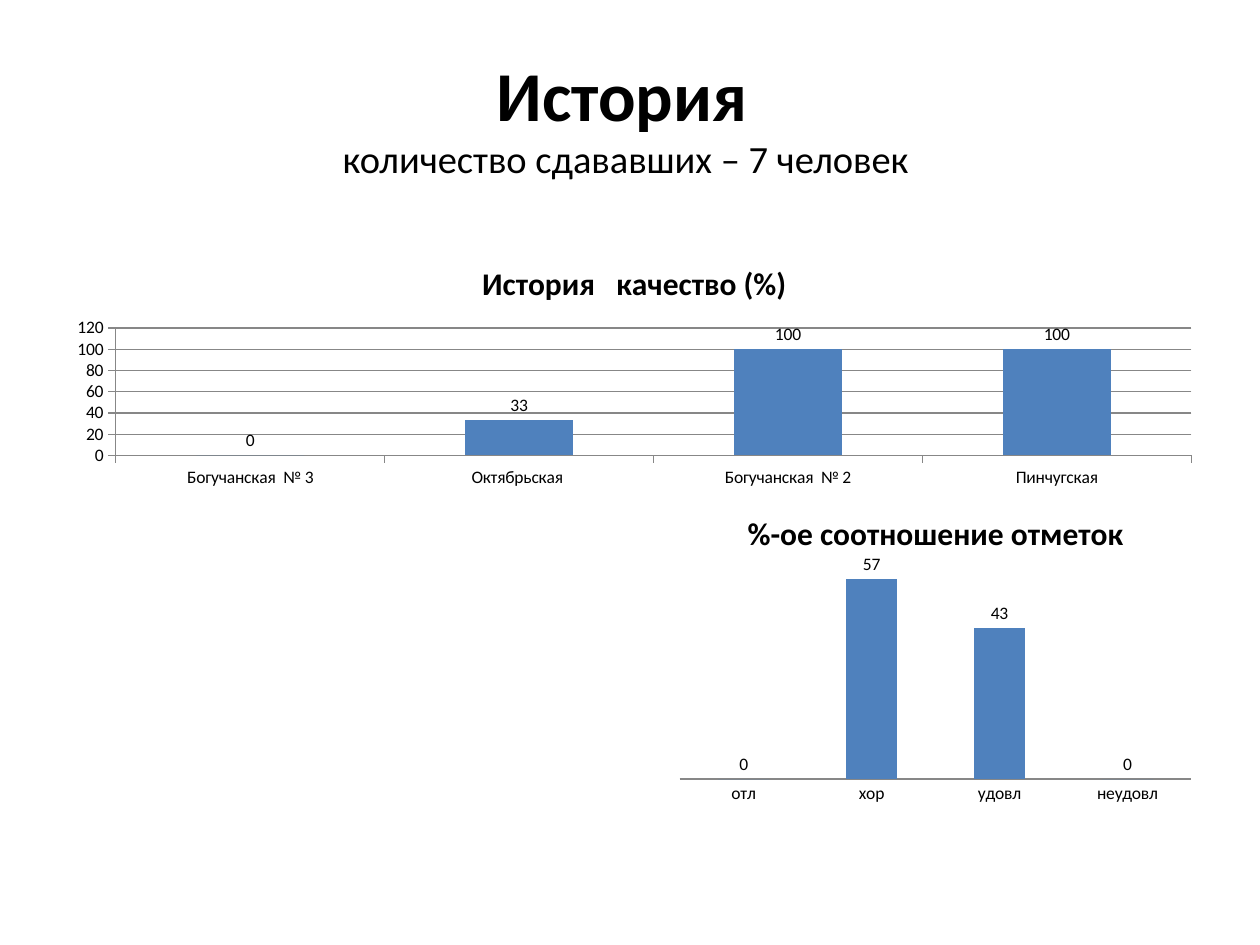
from dataclasses import dataclass
from pptx import Presentation
from pptx import util as u
from pptx.chart import data as chart_data
from pptx.dml import color
from pptx.enum import chart as ce, text

Pt = u.Pt


@dataclass
class Theme:
    font: str = "Calibri"
    ink: color.RGBColor = color.RGBColor(0, 0, 0)
    bar: color.RGBColor = color.RGBColor(0x4F, 0x81, 0xBD)
    rule: color.RGBColor = color.RGBColor(0x87, 0x87, 0x87)
    heading: int = 40
    subheading: int = 22
    chart_title: int = 18
    label: int = 10


theme = Theme()


def style(font, size, bold=False):
    font.name = theme.font
    font.size = Pt(size)
    font.bold = bold
    font.color.rgb = theme.ink


def add_columns(page, title, categories, values, box):
    data = chart_data.CategoryChartData()
    data.categories = categories
    data.add_series("Series 1", values)
    frame = page.shapes.add_chart(
        ce.XL_CHART_TYPE.COLUMN_CLUSTERED, *(Pt(side) for side in box), data)
    chart = frame.chart
    style(chart.font, theme.label)
    chart.has_legend = False
    chart.has_title = True
    span = chart.chart_title.text_frame.paragraphs[0].add_run()
    span.text = title
    style(span.font, theme.chart_title, True)
    chart.chart_title.include_in_layout = False
    plot = chart.plots[0]
    plot.gap_width = 150
    plot.vary_by_categories = False
    plot.has_data_labels = True
    plot.data_labels.show_value = True
    plot.data_labels.position = ce.XL_LABEL_POSITION.OUTSIDE_END
    style(plot.data_labels.font, theme.label)
    fill = plot.series[0].format.fill
    fill.solid()
    fill.fore_color.rgb = theme.bar
    for axis in (chart.category_axis, chart.value_axis):
        axis.major_tick_mark = ce.XL_TICK_MARK.OUTSIDE
        axis.minor_tick_mark = ce.XL_TICK_MARK.NONE
        axis.format.line.color.rgb = theme.rule
        axis.format.line.width = Pt(0.75)
    return chart


deck = Presentation()
deck.slide_width, deck.slide_height = Pt(720), Pt(540)
page = deck.slides.add_slide(deck.slide_layouts[5])

heading = page.shapes.title
heading.left, heading.top = Pt(36), Pt(21.6)
heading.width, heading.height = Pt(648), Pt(90)
heading.text_frame.vertical_anchor = text.MSO_ANCHOR.MIDDLE
para = heading.text_frame.paragraphs[0]
para.alignment = text.PP_ALIGN.CENTER
span = para.add_run()
span.text = "История "
style(span.font, theme.heading, True)
para.add_line_break()
span = para.add_run()
span.text = "количество сдававших – 7 человек "
style(span.font, theme.subheading)

quality = add_columns(
    page, "История   качество (%)",
    ["Богучанская  № 3", "Октябрьская ", "Богучанская  № 2", "Пинчугская"],
    [0, 33, 100, 100], (31, 139.7, 663, 141.8))
quality.value_axis.has_major_gridlines = True
grid = quality.value_axis.major_gridlines.format.line
grid.color.rgb = theme.rule
grid.width = Pt(0.75)

marks = add_columns(
    page, "%-ое соотношение отметок",
    ["отл", "хор", "удовл", "неудовл"],
    [0, 57, 43, 0], (382.3, 281.5, 304.6, 181.4))
marks.plots[0].overlap = -25
marks.category_axis.major_tick_mark = ce.XL_TICK_MARK.NONE
marks.value_axis.has_major_gridlines = False
marks.value_axis.visible = False

deck.save("out.pptx")
